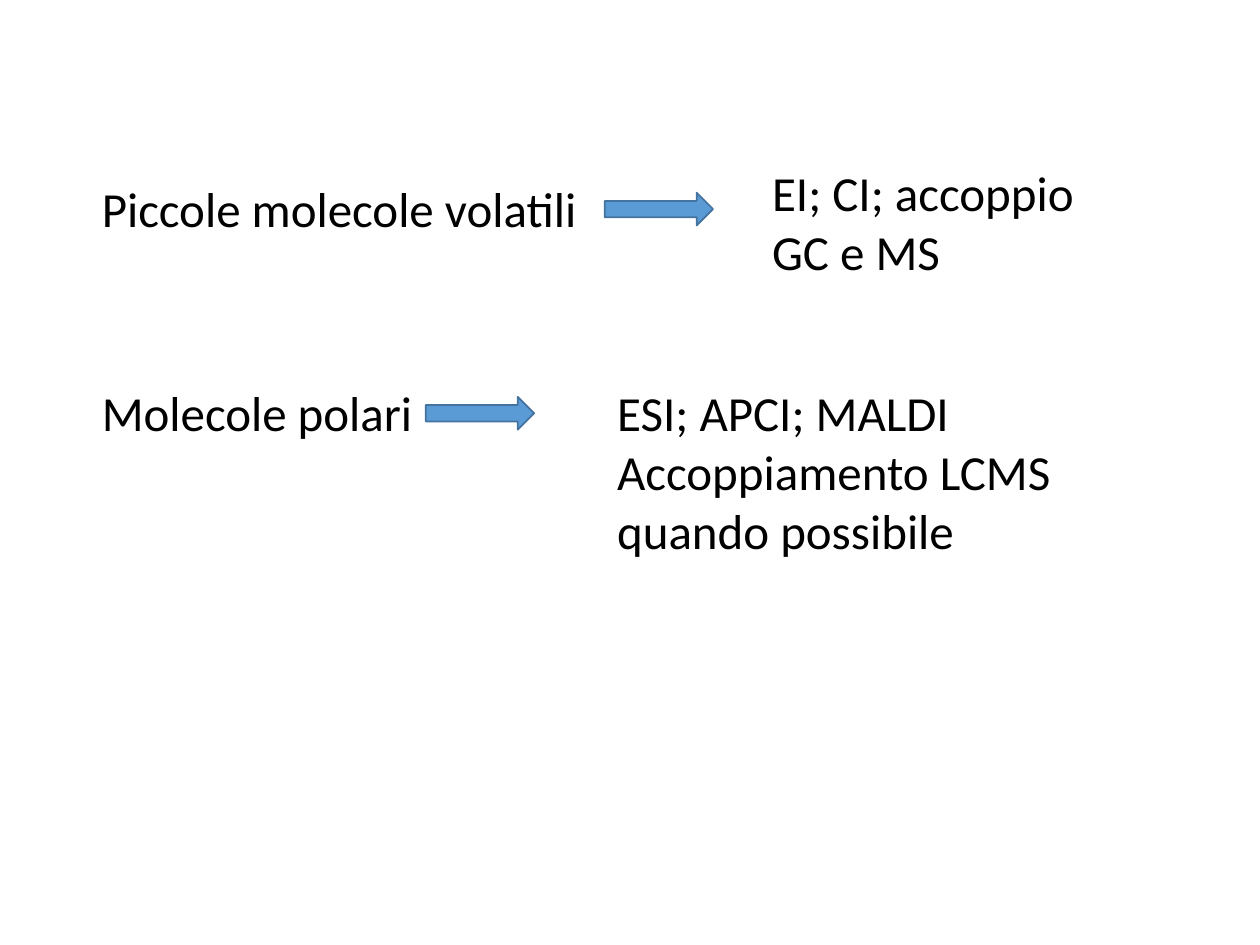
from pptx import Presentation
from pptx.dml.color import RGBColor
from pptx.enum.shapes import MSO_SHAPE as Shape
from pptx.enum.text import MSO_AUTO_SIZE as Fit
from pptx.util import Inches, Pt

BLACK = RGBColor(0x00, 0x00, 0x00)
BLUE = RGBColor(0x5B, 0x9B, 0xD5)
EDGE = RGBColor(0x43, 0x73, 0x9E)

deck = Presentation()
deck.slide_width, deck.slide_height = Inches(10), Inches(7.5)
slide = deck.slides.add_slide(deck.slide_layouts[6])

# left, top, width, height, lines
texts = [
    (0.71, 1.37, 4.31, 0.57, ["Piccole molecole volatili"]),
    (6.03, 1.24, 2.86, 1.04, ["EI; CI; accoppio GC e MS"]),
    (0.71, 2.99, 4.31, 0.57, ["Molecole polari"]),
    (4.8, 2.99, 4.31, 1.51,
     ["ESI; APCI; MALDI", "Accoppiamento LCMS quando possibile"]),
]
for left, top, width, height, lines in texts:
    box = slide.shapes.add_textbox(
        Inches(left), Inches(top), Inches(width), Inches(height))
    frame = box.text_frame
    frame.word_wrap = True
    frame.auto_size = Fit.SHAPE_TO_FIT_TEXT
    frame.text = "\n".join(lines)
    for para in frame.paragraphs:
        para.font.name = "Calibri"
        para.font.size = Pt(28)
        para.font.color.rgb = BLACK

for left, top in [(4.8, 1.53), (3.38, 3.15)]:
    arrow = slide.shapes.add_shape(
        Shape.RIGHT_ARROW, Inches(left), Inches(top), Inches(0.86), Inches(0.26))
    arrow.shadow.inherit = False
    arrow.fill.solid()
    arrow.fill.fore_color.rgb = BLUE
    arrow.line.color.rgb = EDGE
    arrow.line.width = Pt(1)

deck.save("out.pptx")
